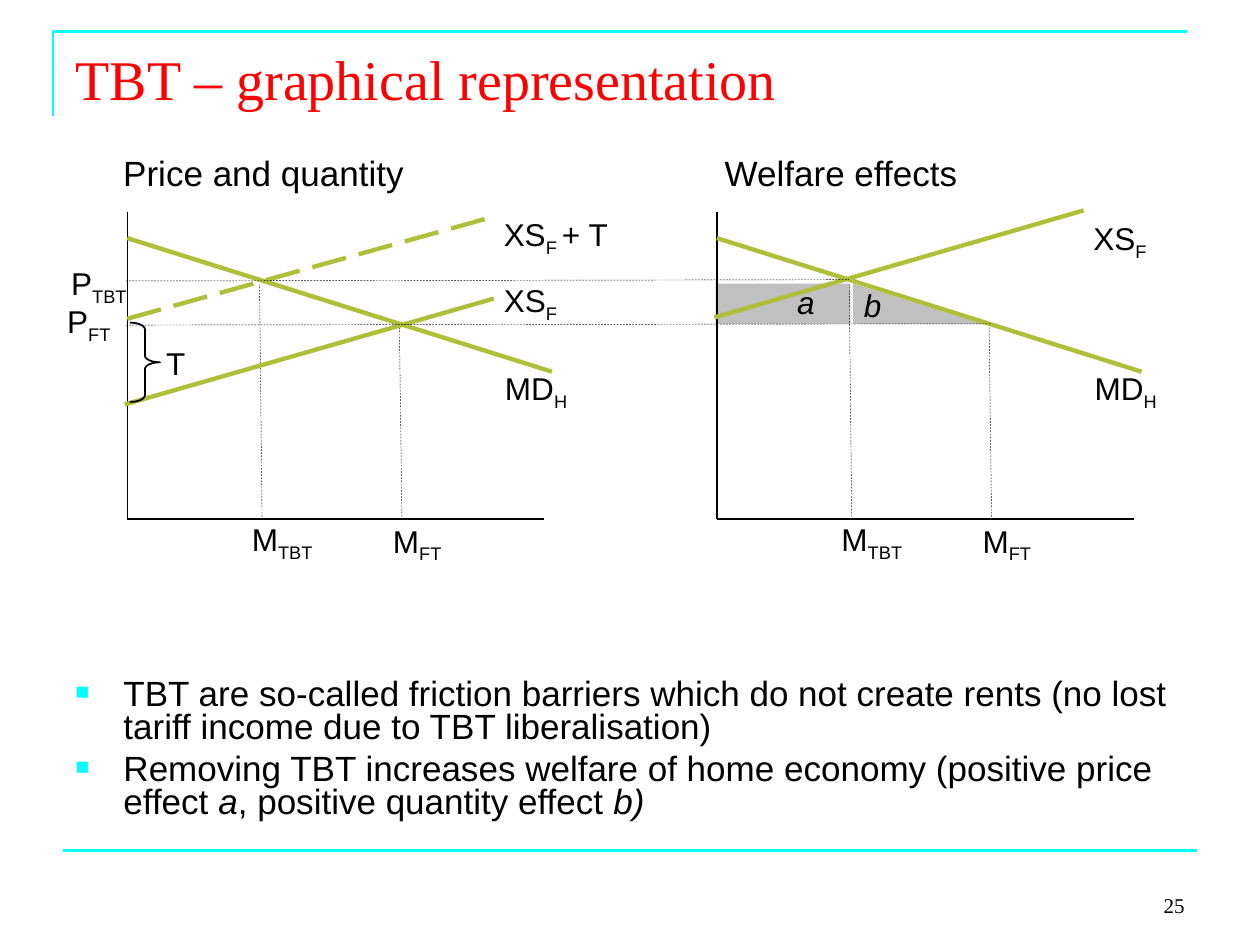
from dataclasses import dataclass
from typing import NamedTuple

from lxml import etree
from pptx import Presentation
from pptx.dml.color import RGBColor
from pptx.enum.dml import MSO_LINE
from pptx.enum.shapes import MSO_CONNECTOR, MSO_SHAPE
from pptx.enum.text import MSO_ANCHOR, MSO_AUTO_SIZE, PP_ALIGN
from pptx.oxml.ns import qn
from pptx.util import Inches, Pt

DASH, LONG = MSO_LINE.DASH, MSO_LINE.LONG_DASH
LEFT, MID, RIGHT = PP_ALIGN.LEFT, PP_ALIGN.CENTER, PP_ALIGN.RIGHT
TOP, LOW = MSO_ANCHOR.TOP, MSO_ANCHOR.BOTTOM
BOX, WEDGE, BRACE = MSO_SHAPE.RECTANGLE, MSO_SHAPE.RIGHT_TRIANGLE, MSO_SHAPE.LEFT_BRACE
STRAIGHT = MSO_CONNECTOR.STRAIGHT
FIXED = MSO_AUTO_SIZE.NONE


@dataclass(frozen=True)
class Theme:
    ink: str = "000000"
    head: str = "FF0000"
    frame: str = "00FFFF"
    curve: str = "AFBF39"
    shade: str = "C0C0C0"
    serif: str = "Times New Roman"
    sans: str = "Arial"
    title: float = 32
    body: float = 20
    label: float = 18
    page: float = 12


class Pen(NamedTuple):
    color: str
    width: float
    dash: MSO_LINE | None = None


class Line(NamedTuple):
    x1: float
    y1: float
    x2: float
    y2: float
    pen: Pen


class Bit(NamedTuple):
    text: str
    sub: bool = False
    slant: bool = False


class Label(NamedTuple):
    x: float
    y: float
    width: float
    bits: list[Bit]
    align: PP_ALIGN = LEFT


T = Theme()
AXIS = Pen(T.ink, 0.75)
GUIDE = Pen(T.ink, 0.25, DASH)
CURVE = Pen(T.curve, 2.5)
SHIFTED = Pen(T.curve, 2.5, LONG)
FRAME = Pen(T.frame, 1.5)
STEP = 4.68


def rgb(code: str) -> RGBColor:
    return RGBColor.from_string(code)


def ink(line, pen: Pen) -> None:
    line.color.rgb = rgb(pen.color)
    line.width = Pt(pen.width)
    if pen.dash is not None:
        line.dash_style = pen.dash


def style(font, size: float, face: str = T.sans, color: str = T.ink) -> None:
    font.size, font.name = Pt(size), face
    font.color.rgb = rgb(color)


def write(par, bits: list[Bit], size: float) -> None:
    for bit in bits:
        run = par.add_run()
        run.text = bit.text
        style(run.font, size)
        if bit.slant:
            run.font.italic = True
        if bit.sub:
            run._r.get_or_add_rPr().set("baseline", "-25000")


def draw_line(shapes, item: Line, shift: float = 0) -> None:
    line = shapes.add_connector(STRAIGHT, Inches(item.x1 + shift), Inches(item.y1),
                                Inches(item.x2 + shift), Inches(item.y2))
    ink(line.line, item.pen)
    etree.SubElement(line._element.spPr, qn("a:effectLst"))


def add_box(shapes, x: float, y: float, width: float, height: float):
    frame = shapes.add_textbox(Inches(x), Inches(y), Inches(width), Inches(height)).text_frame
    frame.word_wrap = True
    return frame


def draw_label(shapes, item: Label, shift: float = 0, size: float = T.label) -> None:
    par = add_box(shapes, item.x + shift, item.y, item.width, 0.4).paragraphs[0]
    par.alignment = item.align
    write(par, item.bits, size)


def draw_shape(shapes, kind: MSO_SHAPE, x: float, y: float, width: float, height: float):
    shape = shapes.add_shape(kind, Inches(x), Inches(y), Inches(width), Inches(height))
    shape.shadow.inherit = False
    return shape


def draw_area(shapes, kind: MSO_SHAPE, x: float, width: float) -> None:
    area = draw_shape(shapes, kind, x, 2.25, width, 0.32)
    area.fill.solid()
    area.fill.fore_color.rgb = rgb(T.shade)
    area.line.fill.background()


def draw_panel(shapes, shift: float, head: str) -> None:
    for line in (Line(1.01, 1.68, 1.01, 4.12, AXIS), Line(1.01, 4.12, 4.32, 4.12, AXIS),
                 Line(1.01, 1.89, 4.38, 2.95, CURVE),
                 Line(2.08, 4.1, 2.06, 2.26, GUIDE), Line(3.19, 4.1, 3.17, 2.59, GUIDE)):
        draw_line(shapes, line, shift)
    for label in (Label(3.91, 2.88, 0.87, [Bit("MD"), Bit("H", True)]),
                  Label(1.9, 4.08, 0.89, [Bit("M"), Bit("TBT", True)]),
                  Label(3.02, 4.09, 0.88, [Bit("M"), Bit("FT", True)])):
        draw_label(shapes, label, shift)
    draw_label(shapes, Label(0.88 + shift * 1.02, 1.15, 3, [Bit(head)]), size=T.body)


def draw_brace(shapes) -> None:
    brace = draw_shape(shapes, BRACE, 1.03, 2.56, 0.24, 0.63)
    brace.rotation = 180
    brace.adjustments[0] = 0.22
    brace.fill.background()
    ink(brace.line, Pen(T.ink, 1))


def draw_frame(shapes) -> None:
    form = shapes.build_freeform(Inches(0.42), Inches(0.92))
    form.add_line_segments([(Inches(0.42), Inches(0.25)), (Inches(9.42), Inches(0.25))], close=False)
    edge = form.convert_to_shape()
    edge.shadow.inherit = False
    edge.fill.background()
    ink(edge.line, FRAME)
    draw_line(shapes, Line(0.5, 6.75, 9.5, 6.75, FRAME))


def place(holder, x: float, y: float, width: float, height: float):
    holder.left, holder.top = Inches(x), Inches(y)
    holder.width, holder.height = Inches(width), Inches(height)
    frame = holder.text_frame
    frame.auto_size, frame.vertical_anchor = FIXED, TOP
    return frame


def add_bullet(par) -> None:
    par.line_spacing, par.space_before = 0.8, Pt(4.5)
    props = par._p.get_or_add_pPr()
    props.set("marL", str(Inches(0.38)))
    props.set("indent", str(-Inches(0.38)))
    color = etree.SubElement(props, qn("a:buClr"))
    etree.SubElement(color, qn("a:srgbClr"), val=T.frame)
    etree.SubElement(props, qn("a:buSzPct"), val="65000")
    etree.SubElement(props, qn("a:buFont"), typeface=T.sans)
    etree.SubElement(props, qn("a:buChar"), char="■")


def fill_text(slide) -> None:
    frame = place(slide.shapes.title, 0.5, 0.3, 9, 0.88)
    frame.text = "TBT – graphical representation"
    par = frame.paragraphs[0]
    par.alignment = LEFT
    style(par.runs[0].font, T.title, T.serif, T.head)
    frame = place(slide.placeholders[1], 0.5, 5.34, 9, 1.52)
    points = [
        [Bit("TBT are so-called friction barriers which do not create rents "
             "(no lost tariff income due to TBT liberalisation)")],
        [Bit("Removing TBT increases welfare of home economy (positive price effect "),
         Bit("a", slant=True), Bit(", positive quantity effect "), Bit("b)", slant=True)],
    ]
    for rank, bits in enumerate(points):
        par = frame.add_paragraph() if rank else frame.paragraphs[0]
        add_bullet(par)
        write(par, bits, T.body)


def main() -> None:
    deck = Presentation()
    deck.slide_width, deck.slide_height = Inches(10), Inches(7.5)
    slide = deck.slides.add_slide(deck.slide_layouts[1])
    shapes = slide.shapes
    fill_text(slide)
    draw_frame(shapes)
    draw_area(shapes, WEDGE, 6.77, 1.03)
    draw_area(shapes, BOX, 5.68, 1.07)
    for rank, head in enumerate(("Price and quantity", "Welfare effects")):
        draw_panel(shapes, rank * STEP, head)
    for line in (Line(0.99, 3.21, 3.92, 2.37, CURVE), Line(1.01, 2.53, 3.88, 1.73, SHIFTED),
                 Line(5.67, 2.52, 8.6, 1.67, CURVE),
                 Line(1, 2.23, 6.74, 2.22, GUIDE), Line(1, 2.58, 7.86, 2.57, GUIDE)):
        draw_line(shapes, line)
    supply = [Bit("XS"), Bit("F", True)]
    for label in (Label(3.9, 1.66, 1.23, [Bit("XS"), Bit("F ", True), Bit("+ T")]),
                  Label(3.9, 2.18, 1.01, supply), Label(8.58, 1.69, 1.01, supply),
                  Label(0.41, 2.05, 0.75, [Bit("P"), Bit("TBT", True)], MID),
                  Label(0.39, 2.35, 0.63, [Bit("P"), Bit("FT", True)], MID),
                  Label(6.12, 2.2, 0.55, [Bit("a", slant=True)], MID),
                  Label(6.65, 2.22, 0.55, [Bit("b", slant=True)], MID),
                  Label(1.12, 2.68, 0.55, [Bit("T")], MID)):
        draw_label(shapes, label)
    draw_brace(shapes)
    page = add_box(shapes, 7.17, 6.83, 2.33, 0.5)
    page.text, page.vertical_anchor = "25", LOW
    page.paragraphs[0].alignment = RIGHT
    style(page.paragraphs[0].runs[0].font, T.page, T.serif)
    deck.save("out.pptx")


if __name__ == "__main__":
    main()
